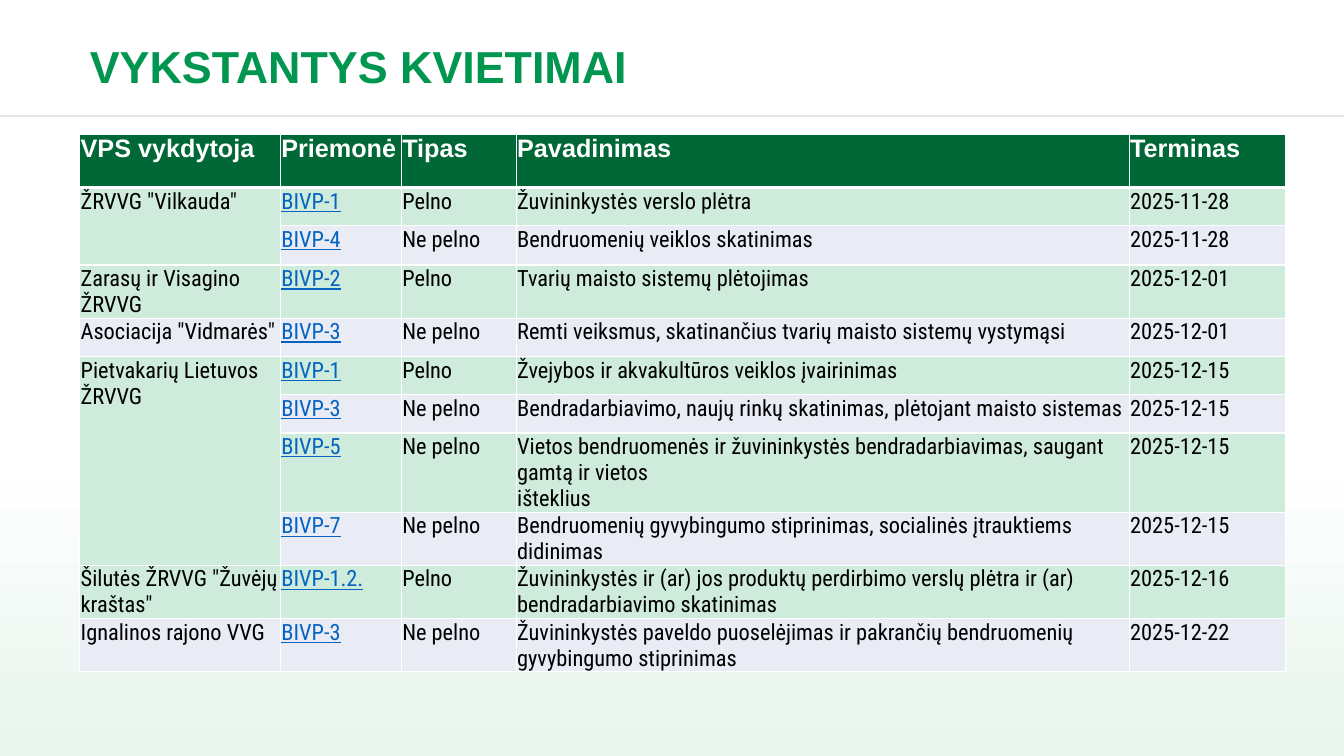
from pptx import Presentation
from pptx.dml.color import RGBColor
from pptx.enum.shapes import MSO_CONNECTOR, MSO_SHAPE
from pptx.enum.text import MSO_ANCHOR, MSO_AUTO_SIZE, PP_ALIGN
from pptx.oxml.ns import qn
from pptx.util import Inches, Pt
from lxml import etree

RECT, LINE = MSO_SHAPE.RECTANGLE, MSO_CONNECTOR.STRAIGHT
LEFT, TOP, MIDDLE = PP_ALIGN.LEFT, MSO_ANCHOR.TOP, MSO_ANCHOR.MIDDLE
NO_FIT = MSO_AUTO_SIZE.NONE

GREEN = RGBColor(0x00, 0x96, 0x50)
DARK = RGBColor(0x00, 0x68, 0x37)
MINT = RGBColor(0xCE, 0xEB, 0xDB)
PALE = RGBColor(0xE9, 0xEB, 0xF5)
HAZE = RGBColor(0xE9, 0xF5, 0xEF)
GREY = RGBColor(0xE6, 0xE6, 0xE6)
BLUE = RGBColor(0x05, 0x63, 0xC1)
BLACK = RGBColor(0, 0, 0)
WHITE = RGBColor(0xFF, 0xFF, 0xFF)

HEADS = ["VPS vykdytoja", "Priemonė", "Tipas", "Pavadinimas", "Terminas"]
# Each group: its name, then its calls
GROUPS = [
    ('ŽRVVG "Vilkauda"', [
        ("BIVP-1", "Pelno", "Žuvininkystės verslo plėtra", "2025-11-28"),
        ("BIVP-4", "Ne pelno", "Bendruomenių veiklos skatinimas", "2025-11-28")]),
    ("Zarasų ir Visagino ŽRVVG", [
        ("BIVP-2", "Pelno", "Tvarių maisto sistemų plėtojimas", "2025-12-01")]),
    ('Asociacija "Vidmarės"', [
        ("BIVP-3", "Ne pelno",
         "Remti veiksmus, skatinančius tvarių maisto sistemų vystymąsi", "2025-12-01")]),
    ("Pietvakarių Lietuvos ŽRVVG", [
        ("BIVP-1", "Pelno", "Žvejybos ir akvakultūros veiklos įvairinimas", "2025-12-15"),
        ("BIVP-3", "Ne pelno",
         "Bendradarbiavimo, naujų rinkų skatinimas, plėtojant maisto sistemas", "2025-12-15"),
        ("BIVP-5", "Ne pelno",
         "Vietos bendruomenės ir žuvininkystės bendradarbiavimas, "
         "saugant gamtą ir vietos\višteklius", "2025-12-15"),
        ("BIVP-7", "Ne pelno",
         "Bendruomenių gyvybingumo stiprinimas, socialinės įtrauktiems didinimas",
         "2025-12-15")]),
    ('Šilutės ŽRVVG "Žuvėjų kraštas"', [
        ("BIVP-1.2.", "Pelno",
         "Žuvininkystės ir (ar) jos produktų perdirbimo verslų plėtra "
         "ir (ar) bendradarbiavimo skatinimas", "2025-12-16")]),
    ("Ignalinos rajono VVG", [
        ("BIVP-3", "Ne pelno",
         "Žuvininkystės paveldo puoselėjimas ir pakrančių bendruomenių "
         "gyvybingumo stiprinimas", "2025-12-22")]),
]
# Shares of the slide's width and height, in percent
COLS = [14.93, 9, 8.55, 45.61, 11.63]
ROWS = [7.07, 5.07, 5.2] + [5.07] * 6 + [6.13, 5.07]


class Deck:
    head, body = "Arial", "Roboto Condensed"

    def __init__(self):
        self.prs = Presentation()
        self.prs.slide_width, self.prs.slide_height = Inches(13.33), Inches(7.5)
        self.slide = self.prs.slides.add_slide(self.prs.slide_layouts[5])

    def x(self, share):
        return int(self.prs.slide_width * share / 100)

    def y(self, share):
        return int(self.prs.slide_height * share / 100)

    def box(self, left, top, width, height):
        return self.x(left), self.y(top), self.x(width), self.y(height)

    def style(self, par, face, size, color, bold=False, line=False):
        for run in par.runs:
            font = run.font
            font.name, font.size, font.bold = face, Pt(size), bold
            font.color.rgb, font.underline = color, line

    def wash(self):
        rect = self.slide.shapes.add_shape(RECT, *self.box(0, 0, 100, 100))
        rect.shadow.inherit = False
        rect.line.fill.background()
        rect.fill.gradient()
        rect.fill.gradient_angle = 90
        low, high = rect.fill.gradient_stops
        low.color.rgb, low.position = HAZE, 0
        high.color.rgb, high.position = WHITE, 0.4

    def rule(self, top):
        line = self.slide.shapes.add_connector(
            LINE, 0, self.y(top), self.x(100), self.y(top))
        line.line.color.rgb, line.line.width = GREY, Pt(1)
        etree.SubElement(line._element.spPr, qn("a:effectLst"))

    def title(self, text, *area):
        shape = self.slide.shapes.title
        shape.left, shape.top, shape.width, shape.height = self.box(*area)
        # Bring the title in front of the backdrop
        self.slide.shapes._spTree.append(shape._element)
        frame = shape.text_frame
        frame.text = text
        frame.auto_size, frame.vertical_anchor = NO_FIT, MIDDLE
        par = frame.paragraphs[0]
        par.alignment, par.line_spacing = LEFT, 0.8
        self.style(par, self.head, 32, GREEN, True)

    def edge(self, cell, sides):
        props = cell._tc.get_or_add_tcPr()
        for spot, (side, width) in enumerate(sides.items()):
            line = etree.Element(qn("a:ln" + side), w=str(Pt(width)))
            fill = etree.SubElement(line, qn("a:solidFill"))
            etree.SubElement(fill, qn("a:srgbClr"), val=str(WHITE))
            props.insert(spot, line)

    def cell(self, cell, text, fill, row, col):
        cell.text = text
        cell.fill.solid()
        cell.fill.fore_color.rgb = fill
        cell.margin_left = cell.margin_right = cell.margin_top = Inches(0.01)
        cell.margin_bottom, cell.vertical_anchor = 0, TOP
        par = cell.text_frame.paragraphs[0]
        if row == 0:
            self.style(par, self.head, 18, WHITE, True)
        else:
            link = col == 1
            self.style(par, self.body, 16, BLUE if link else BLACK, line=link)
        self.edge(cell, {"L": 1, "R": 1, "T": 3 if row == 1 else 1,
                         "B": 3 if row == 0 else 1})

    def table(self, left, top):
        area = self.box(left, top, sum(COLS), sum(ROWS))
        grid = self.slide.shapes.add_table(len(ROWS), len(COLS), *area).table
        for col, share in zip(grid.columns, COLS):
            col.width = self.x(share)
        for row, share in zip(grid.rows, ROWS):
            row.height = self.y(share)
        # Only the first call of a group shows its name
        data = [HEADS] + [(name if n == 0 else "", *call)
                          for name, calls in GROUPS for n, call in enumerate(calls)]
        for r, items in enumerate(data):
            fill = DARK if r == 0 else MINT if r % 2 else PALE
            for c, text in enumerate(items):
                self.cell(grid.cell(r, c), text, fill, r, c)
        # Join the name cells of each group
        first = 1
        for _, calls in GROUPS:
            last = first + len(calls) - 1
            if last > first:
                grid.cell(first, 0).merge(grid.cell(last, 0))
            first = last + 1


def main():
    deck = Deck()
    # Backdrop
    deck.wash()
    deck.rule(15.33)
    # Content
    deck.title("VYKSTANTYS KVIETIMAI", 5.93, 3.2, 80.12, 12.27)
    deck.table(5.93, 17.73)
    deck.prs.save("out.pptx")


if __name__ == "__main__":
    main()
